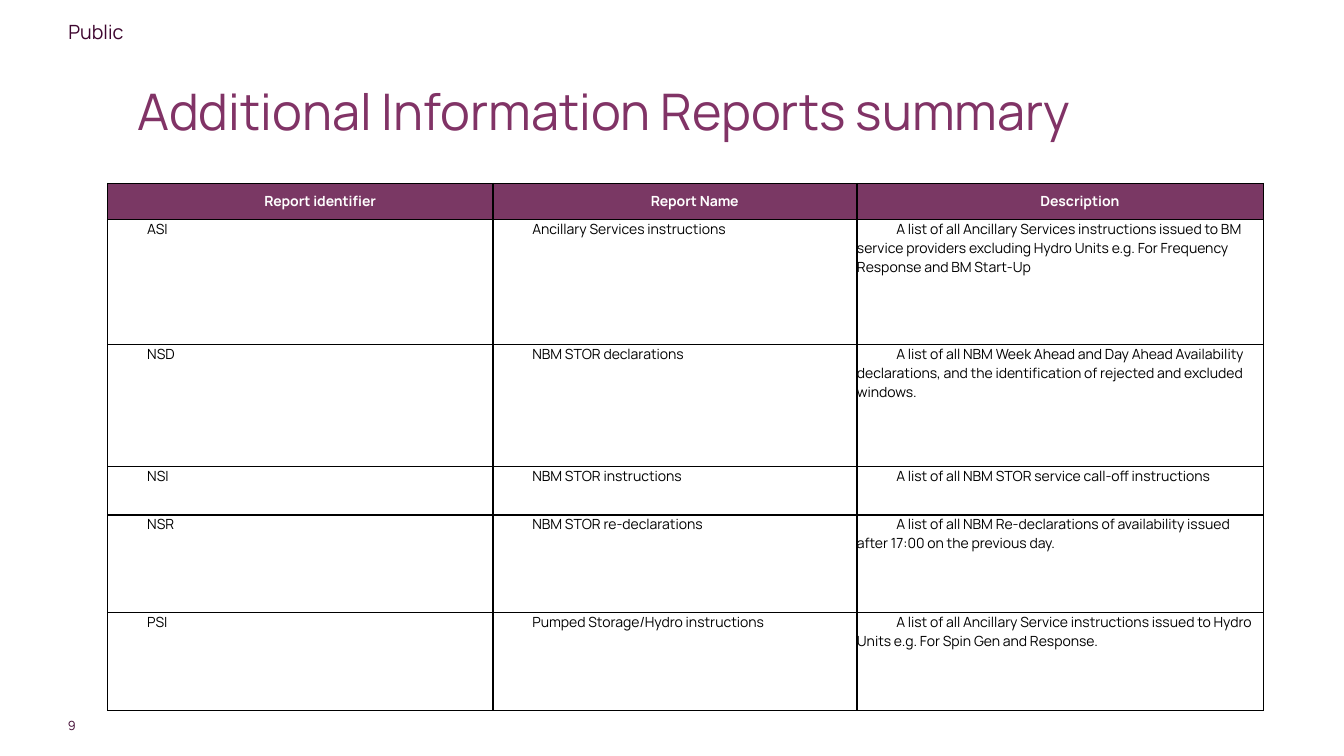
import dataclasses

import lxml.etree
import pptx
import pptx.dml.color
import pptx.enum.text
import pptx.oxml.ns
import pptx.util

ALIGN = pptx.enum.text.PP_ALIGN
ANCHOR = pptx.enum.text.MSO_ANCHOR
FIT = pptx.enum.text.MSO_AUTO_SIZE
WIDTH, HEIGHT = 13.33, 7.5


@dataclasses.dataclass(frozen=True)
class Theme:
    font: str = "Manrope"
    title: str = "813366"
    label: str = "3F0730"
    header: str = "7A3864"
    light: str = "FFFFFF"
    dark: str = "000000"
    title_size: int = 36
    label_size: int = 14
    table_size: int = 10
    number_size: int = 9
    border: int = 1


THEME = Theme()
COLUMNS = [3.82, 3.61, 4.03]
ROWS = [0.36, 1.24, 1.21, 0.48, 0.97, 0.97]
INDENT = 0.39
REPORTS = [
    ("Report identifier", "Report Name", "Description"),
    ("ASI", "Ancillary Services instructions",
     "A list of all Ancillary Services instructions issued to BM service providers "
     "excluding Hydro Units e.g. For Frequency Response and BM Start-Up"),
    ("NSD", "NBM STOR declarations",
     "A list of all NBM Week Ahead and Day Ahead Availability declarations, "
     "and the identification of rejected and excluded windows."),
    ("NSI", "NBM STOR instructions",
     "A list of all NBM STOR service call-off instructions"),
    ("NSR", "NBM STOR re-declarations",
     "A list of all NBM Re-declarations of availability issued after 17:00 "
     "on the previous day."),
    ("PSI", "Pumped Storage/Hydro instructions",
     "A list of all Ancillary Service instructions issued to Hydro Units "
     "e.g. For Spin Gen and Response."),
]


def apply(obj, formats):
    for name, value in formats.items():
        setattr(obj, name, value)


def inches(box):
    return [pptx.util.Inches(v) for v in box]


def margins(size):
    sides = ("left", "top", "right", "bottom")
    return {f"margin_{side}": pptx.util.Inches(size) for side in sides}


def write(tf, text, size, color, align=ALIGN.LEFT, bold=False):
    p = tf.paragraphs[0]
    p.alignment = align
    r = p.add_run()
    r.text = text
    apply(r.font, {"name": THEME.font, "size": pptx.util.Pt(size), "bold": bold})
    r.font.color.rgb = pptx.dml.color.RGBColor.from_string(color)
    return p


def add_title(s, box, text):
    sp = s.shapes.title
    apply(sp, dict(zip(("left", "top", "width", "height"), inches(box))))
    apply(sp.text_frame, {"word_wrap": True, "auto_size": FIT.NONE,
                          "vertical_anchor": ANCHOR.MIDDLE, **margins(0.1)})
    write(sp.text_frame, text, THEME.title_size, THEME.title)


def add_label(s, box, text, size, align=ALIGN.LEFT, **formats):
    tf = s.shapes.add_textbox(*inches(box)).text_frame
    apply(tf, {"word_wrap": True, **formats})
    write(tf, text, size, THEME.label, align)


def add_borders(cell):
    props = cell._tc.get_or_add_tcPr()
    for i, side in enumerate(("lnL", "lnR", "lnT", "lnB")):
        ln = lxml.etree.Element(pptx.oxml.ns.qn(f"a:{side}"),
                                w=str(pptx.util.Pt(THEME.border)))
        fill = lxml.etree.SubElement(ln, pptx.oxml.ns.qn("a:solidFill"))
        lxml.etree.SubElement(fill, pptx.oxml.ns.qn("a:srgbClr"), val=THEME.dark)
        props.insert(i, ln)


def fill_cell(cell, text, is_header):
    apply(cell, {"vertical_anchor": ANCHOR.MIDDLE if is_header else ANCHOR.TOP,
                 **margins(0)})
    if is_header:
        cell.fill.solid()
        cell.fill.fore_color.rgb = pptx.dml.color.RGBColor.from_string(THEME.header)
    else:
        cell.fill.background()
    add_borders(cell)
    p = write(cell.text_frame, text, THEME.table_size,
              THEME.light if is_header else THEME.dark,
              ALIGN.CENTER if is_header else ALIGN.LEFT, is_header)
    apply_indent = {"marL": "0", "indent": str(pptx.util.Inches(INDENT))}
    for name, value in apply_indent.items():
        p._p.get_or_add_pPr().set(name, value)


def add_reports(s, left, top):
    box = inches((left, top, sum(COLUMNS), sum(ROWS)))
    table = s.shapes.add_table(len(ROWS), len(COLUMNS), *box).table
    for column, width in zip(table.columns, inches(COLUMNS)):
        column.width = width
    for row, height, texts in zip(table.rows, inches(ROWS), REPORTS):
        row.height = height
        for cell, text in zip(row.cells, texts):
            fill_cell(cell, text, texts is REPORTS[0])


def main():
    prs = pptx.Presentation()
    prs.slide_width, prs.slide_height = inches((WIDTH, HEIGHT))
    s = prs.slides.add_slide(prs.slide_layouts[5])
    add_label(s, (0.57, 7.12, 0.18, 0.15), "9", THEME.number_size, ALIGN.RIGHT,
              vertical_anchor=ANCHOR.MIDDLE, **margins(0) | {"word_wrap": False})
    add_label(s, (0.58, 0.15, 5, 0.34), "Public", THEME.label_size)
    add_title(s, (1.26, 0.37, 9.85, 1.45), "Additional Information Reports summary")
    add_reports(s, 1.07, 1.82)
    prs.save("out.pptx")


if __name__ == "__main__":
    main()
